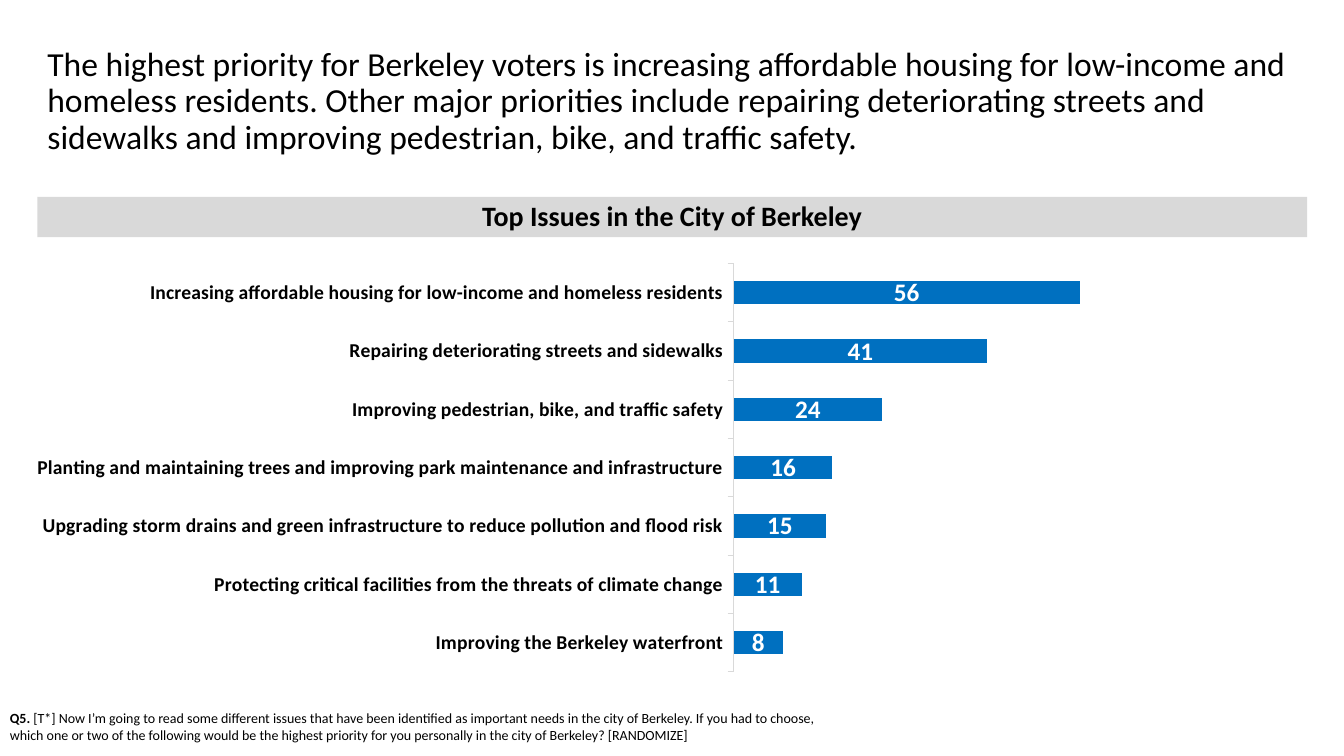
from dataclasses import dataclass

from lxml.etree import SubElement
from pptx import Presentation
from pptx.chart.data import CategoryChartData
from pptx.dml.color import RGBColor
from pptx.enum.chart import XL_CHART_TYPE, XL_LABEL_POSITION, XL_TICK_LABEL_POSITION, XL_TICK_MARK
from pptx.enum.shapes import MSO_SHAPE
from pptx.enum.text import MSO_ANCHOR, MSO_AUTO_SIZE, PP_ALIGN
from pptx.oxml.ns import qn
from pptx.util import Cm, Pt


@dataclass(frozen=True)
class Theme:
    font: str = "Calibri"
    text: RGBColor = RGBColor(0, 0, 0)
    white: RGBColor = RGBColor(255, 255, 255)
    grey: RGBColor = RGBColor(0xD9, 0xD9, 0xD9)
    bar: RGBColor = RGBColor(0x00, 0x70, 0xC0)
    title: Pt = Pt(24)
    heading: Pt = Pt(20)
    value: Pt = Pt(18)
    category: Pt = Pt(14)
    note: Pt = Pt(10)


theme = Theme()


def set_font(font, size, color=theme.text, bold=False):
    font.name = theme.font
    font.size = size
    font.bold = bold
    font.color.rgb = color


issues = [
    ("Increasing affordable housing for low-income and homeless residents", 56),
    ("Repairing deteriorating streets and sidewalks", 41),
    ("Improving pedestrian, bike, and traffic safety", 24),
    ("Planting and maintaining trees and improving park maintenance and infrastructure", 16),
    ("Upgrading storm drains and green infrastructure to reduce pollution and flood risk", 15),
    ("Protecting critical facilities from the threats of climate change", 11),
    ("Improving the Berkeley waterfront", 8),
]

prs = Presentation()
prs.slide_width = Cm(33.87)
prs.slide_height = Cm(19.05)
s = prs.slides.add_slide(prs.slide_layouts[5])
left, width = Cm(0.94), Cm(32)

title = s.shapes.title
title.left, title.top, title.width, title.height = left, Cm(0.74), width, Cm(3.66)
tf = title.text_frame
tf.text = (
    "The highest priority for Berkeley voters is increasing affordable housing for "
    "low-income and homeless residents. Other major priorities include repairing "
    "deteriorating streets and sidewalks and improving pedestrian, bike, and traffic safety."
)
tf.word_wrap = True
tf.auto_size = MSO_AUTO_SIZE.NONE
tf.vertical_anchor = MSO_ANCHOR.MIDDLE
p = tf.paragraphs[0]
p.alignment = PP_ALIGN.LEFT
p.line_spacing = 0.9
set_font(p.font, theme.title)

data = CategoryChartData()
data.categories = [name for name, value in issues]
data.add_series("Series 1", [value for name, value in issues])
chart = s.shapes.add_chart(
    XL_CHART_TYPE.BAR_STACKED, left, Cm(6.17), Cm(31.57), Cm(11.58), data
).chart
chart.has_legend = False
chart.has_title = False
set_font(chart.font, theme.note)

axis = chart.category_axis
axis.reverse_order = True
axis.major_tick_mark = XL_TICK_MARK.OUTSIDE
axis.tick_label_position = XL_TICK_LABEL_POSITION.LOW
axis.format.line.color.rgb = theme.grey
axis.format.line.width = Pt(0.75)
set_font(axis.tick_labels.font, theme.category, bold=True)

axis = chart.value_axis
axis.minimum_scale = 0
axis.maximum_scale = 90
axis.has_major_gridlines = False
axis.visible = False

plot = chart.plots[0]
plot.gap_width = 150
plot.overlap = 100
plot.vary_by_categories = False
bars = plot.series[0]
bars.format.fill.solid()
bars.format.fill.fore_color.rgb = theme.bar
labels = bars.data_labels
labels.show_value = True
labels.position = XL_LABEL_POSITION.CENTER
set_font(labels.font, theme.value, theme.white, True)

area = chart.element.find(".//" + qn("c:plotArea"))
for old in area.findall(qn("c:layout")):
    area.remove(old)
layout = SubElement(area, qn("c:layout"))
area.insert(0, layout)
manual = SubElement(layout, qn("c:manualLayout"))
for tag, val in [
    ("layoutTarget", "inner"), ("xMode", "edge"), ("yMode", "edge"),
    ("x", "0.555"), ("y", "0.041"), ("w", "0.445"), ("h", "0.888"),
]:
    SubElement(manual, qn("c:" + tag)).set("val", val)

sp = s.shapes.add_shape(MSO_SHAPE.RECTANGLE, left, Cm(4.96), width, Cm(1.02))
sp.shadow.inherit = False
sp.fill.solid()
sp.fill.fore_color.rgb = theme.grey
sp.line.fill.background()
tf = sp.text_frame
tf.text = "Top Issues in the City of Berkeley"
tf.word_wrap = True
tf.vertical_anchor = MSO_ANCHOR.MIDDLE
p = tf.paragraphs[0]
p.alignment = PP_ALIGN.CENTER
p.line_spacing = 0.9
p.space_before = Pt(10)
set_font(p.font, theme.heading, bold=True)

sp = s.shapes.add_textbox(Cm(0), Cm(17.75), Cm(20.83), Cm(1.12))
tf = sp.text_frame
tf.word_wrap = True
tf.auto_size = MSO_AUTO_SIZE.SHAPE_TO_FIT_TEXT
p = tf.paragraphs[0]
set_font(p.font, theme.note)
r = p.add_run()
r.text = "Q5. "
r.font.bold = True
r = p.add_run()
r.text = (
    "[T*] Now I’m going to read some different issues that have been identified as "
    "important needs in the city of Berkeley. If you had to choose, which one or two of "
    "the following would be the highest priority for you personally in the city of "
    "Berkeley? [RANDOMIZE]"
)

prs.save("out.pptx")
